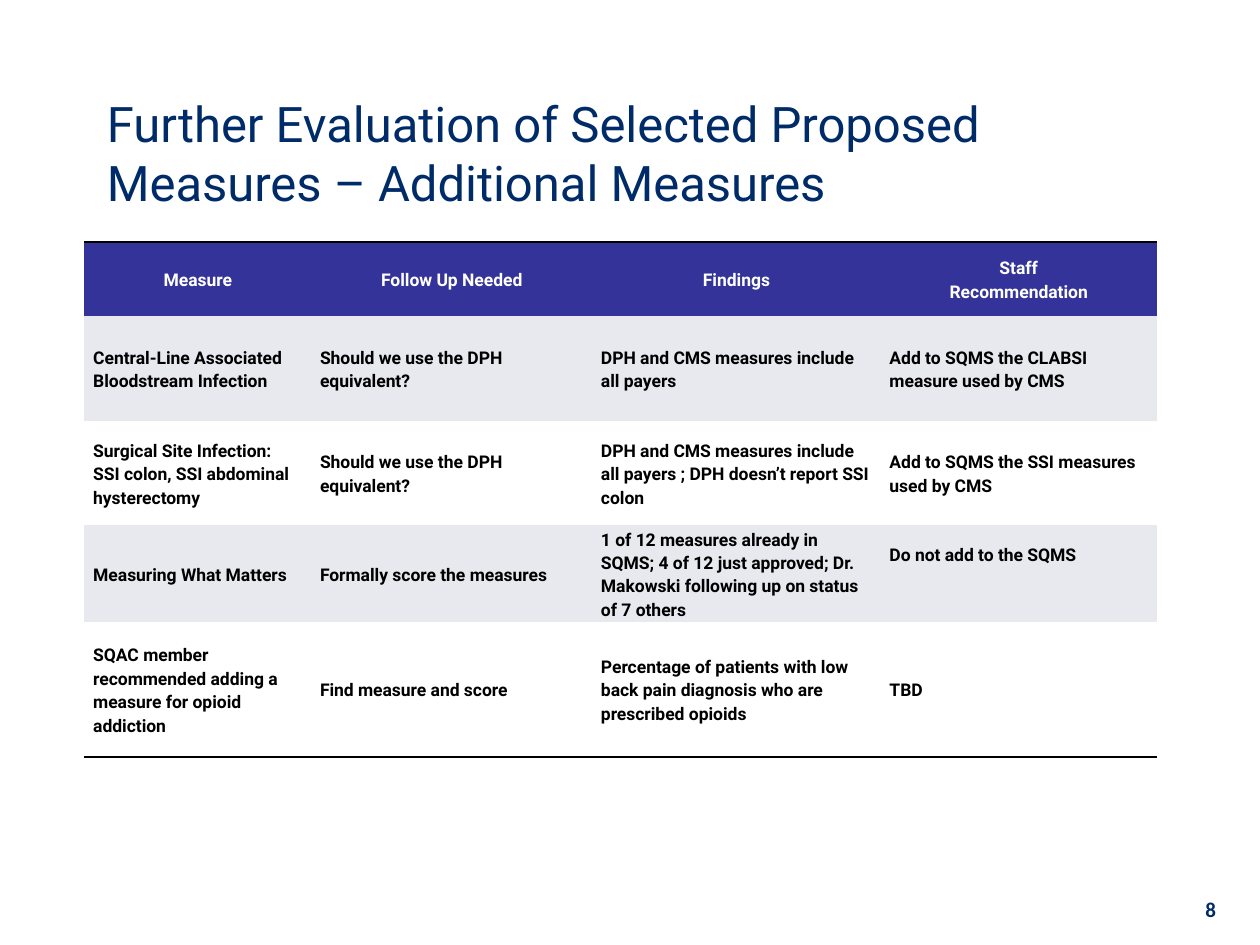
from lxml import etree
from pptx import Presentation
from pptx.dml.color import RGBColor
from pptx.enum.text import MSO_ANCHOR, PP_ALIGN
from pptx.oxml.ns import qn
from pptx.util import Inches, Pt

MIDDLE = MSO_ANCHOR.MIDDLE
LEFT, CENTER, RIGHT = PP_ALIGN.LEFT, PP_ALIGN.CENTER, PP_ALIGN.RIGHT

# Content
TITLE = "Further Evaluation of Selected Proposed Measures – Additional Measures"
PAGE = "8"
ROWS = [
    ("Measure", "Follow Up Needed", "Findings", "Staff\nRecommendation"),
    ("Central-Line Associated Bloodstream Infection",
     "Should we use the DPH equivalent?",
     "DPH and CMS measures include all payers",
     "Add to SQMS the CLABSI measure used by CMS"),
    ("Surgical Site Infection:\vSSI colon, SSI abdominal hysterectomy",
     "Should we use the DPH equivalent?",
     "DPH and CMS measures include all payers ; DPH doesn’t report SSI colon",
     "Add to SQMS the SSI measures used by CMS"),
    ("Measuring What Matters",
     "Formally score the measures",
     "1 of 12 measures already in SQMS; 4 of 12 just approved; "
     "Dr. Makowski following up on status of 7 others",
     "Do not add to the SQMS"),
    ("SQAC member recommended adding a measure for opioid addiction",
     "Find measure and score",
     "Percentage of patients with low back pain diagnosis who are "
     "prescribed opioids",
     "TBD"),
]
WIDTHS = [1.8, 2.23, 2.29, 2.19]
HEIGHTS = [0.59, 0.83, 0.83, 0.58, 1.07]
RAISED = (3, 3)  # cell whose text sits above the middle

THEME = {
    "font": "Roboto", "number": "Calibri",
    "navy": "002B69", "head": "333399", "white": "FFFFFF",
    "band": "E8E8EF", "ink": "000000",
    "title": 28, "page": 12, "cell": 10,
}


def style(frame, size, color, font="font", bold=False, align=LEFT):
    for para in frame.paragraphs:
        para.alignment = align
        for run in para.runs:
            run.font.name = THEME[font]
            run.font.size = Pt(THEME[size])
            run.font.bold = bold
            run.font.color.rgb = RGBColor.from_string(THEME[color])


def label(slide, text, place, *look, **more):
    frame = slide.shapes.add_textbox(*map(Inches, place)).text_frame
    frame.word_wrap = True
    frame.vertical_anchor = MIDDLE
    frame.text = text
    style(frame, *look, **more)


def border(cell, drawn):
    """Draw the named sides in ink and clear the others."""
    props = cell._tc.get_or_add_tcPr()
    for spot, side in enumerate("LRTB"):
        line = etree.Element(qn("a:ln" + side), w=str(Pt(1)))
        if side in drawn:
            fill = etree.SubElement(line, qn("a:solidFill"))
            etree.SubElement(fill, qn("a:srgbClr"), val=THEME["ink"])
        else:
            etree.SubElement(line, qn("a:noFill"))
        props.insert(spot, line)


def fill_cell(cell, text, row):
    head = row == 0
    cell.text = text
    cell.vertical_anchor = MIDDLE
    cell.margin_left = cell.margin_right = Inches(0.06 if head else 0.07)
    cell.margin_top = cell.margin_bottom = 0
    style(cell.text_frame, "cell", "white" if head else "ink",
          bold=True, align=CENTER if head else LEFT)
    for para in cell.text_frame.paragraphs:
        para.line_spacing = 1.15
        para.space_after = Pt(0 if head else 10)
    shade = "head" if head else "band" if row % 2 else "white"
    cell.fill.solid()
    cell.fill.fore_color.rgb = RGBColor.from_string(THEME[shade])
    border(cell, "T" if head else "B" if row == len(ROWS) - 1 else "")


deck = Presentation()
deck.slide_width, deck.slide_height = Inches(10), Inches(7.5)
slide = deck.slides.add_slide(deck.slide_layouts[6])

# Title and page number
label(slide, TITLE, (0.75, 0.67, 8.5, 1.08), "title", "navy")
label(slide, PAGE, (7.67, 7.08, 2.08, 0.27), "page", "navy",
      font="number", bold=True, align=RIGHT)

# Table of measures
table = slide.shapes.add_table(
    len(ROWS), len(WIDTHS), Inches(0.67), Inches(1.92),
    Inches(sum(WIDTHS)), Inches(sum(HEIGHTS))).table
for col, width in zip(table.columns, WIDTHS):
    col.width = Inches(width)
for r, (texts, height) in enumerate(zip(ROWS, HEIGHTS)):
    table.rows[r].height = Inches(height)
    for c, text in enumerate(texts):
        fill_cell(table.cell(r, c), text, r)
table.cell(*RAISED).margin_bottom = Inches(0.32)

deck.save("out.pptx")
